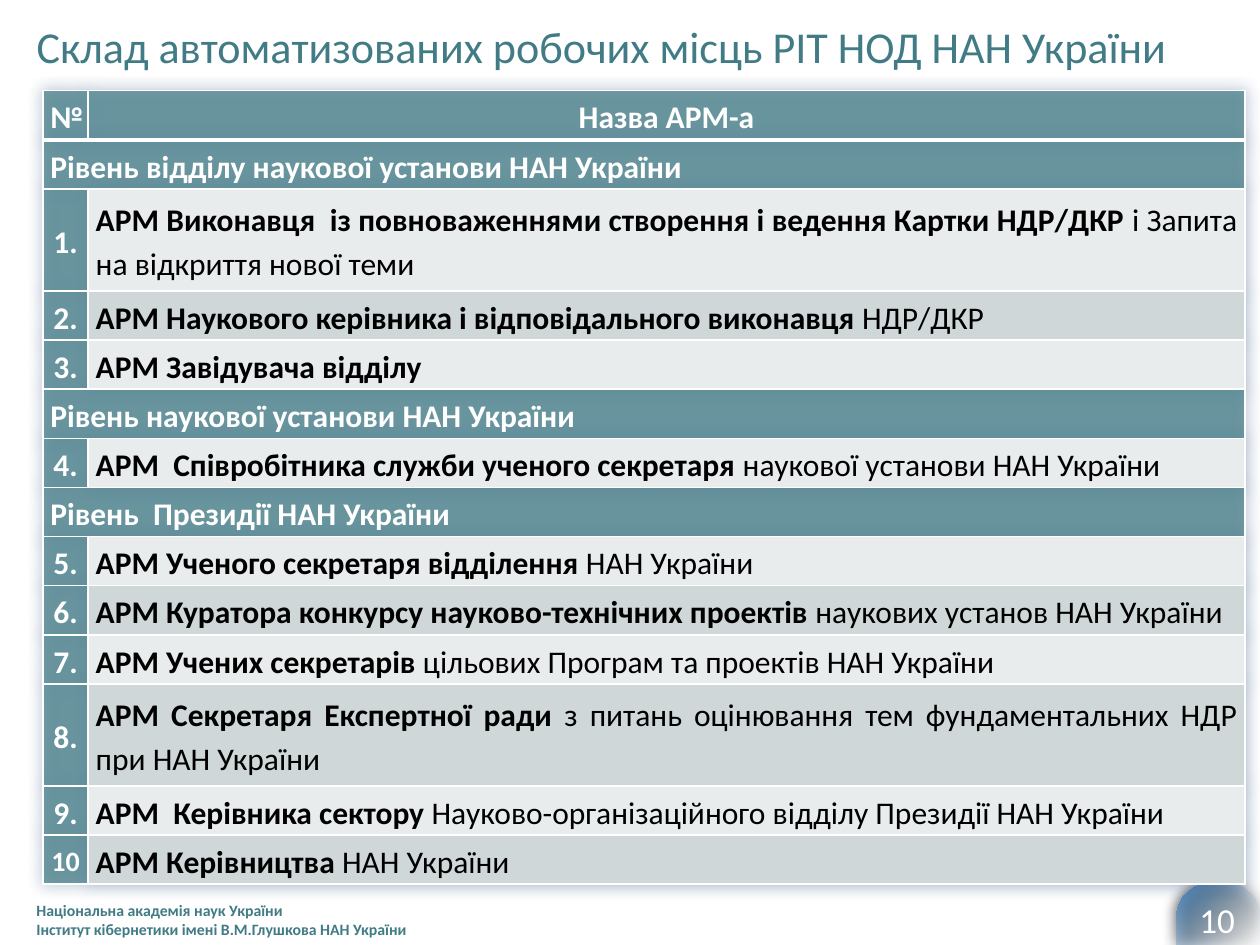
import pptx
import pptx.util
import pptx.oxml
import pptx.oxml.ns
import pptx.dml.color
import pptx.enum.shapes
import pptx.enum.text

ALIGN = pptx.enum.text.PP_ALIGN
MIDDLE = pptx.enum.text.MSO_ANCHOR.MIDDLE
NS = pptx.oxml.ns.nsdecls("a")
COLS, ROWS = 100, 75

HUES = {
    "teal": "417B85", "band": "417B84", "light": "E9ECED", "dark": "CFD7D9",
    "white": "FFFFFF", "page": "FEFFFF", "black": "000000",
    "pale": "E5E9EE", "blue": "3477B2", "glow": "1F497D",
}

# A lone string is a level heading; a pair is number and "bold|plain" name.
ITEMS = [
    "Рівень відділу наукової установи НАН України",
    ("1.", "АРМ Виконавця  із повноваженнями створення і ведення Картки НДР/ДКР |"
           "і Запита на відкриття нової теми"),
    ("2.", "АРМ Наукового керівника і відповідального виконавця |НДР/ДКР"),
    ("3.", "АРМ Завідувача відділу"),
    "Рівень наукової установи НАН України",
    ("4.", "АРМ  Співробітника служби ученого секретаря |наукової установи НАН України"),
    "Рівень  Президії НАН України",
    ("5.", "АРМ Ученого секретаря відділення |НАН України"),
    ("6.", "АРМ Куратора конкурсу науково-технічних проектів |наукових установ НАН України"),
    ("7.", "АРМ Учених секретарів |цільових Програм та проектів НАН України"),
    ("8.", "АРМ Секретаря Експертної ради |"
           "з питань оцінювання тем фундаментальних НДР при НАН України"),
    ("9.", "АРМ  Керівника сектору |Науково-організаційного відділу Президії НАН України"),
    ("10", "АРМ Керівництва |НАН України"),
]
TALL = ("1.", "8.")


def write(frame, text, size=18, hue="black", bold=False, align=ALIGN.LEFT, space=1):
    """Fill a frame; a bar in the text ends its bold part."""
    frame.word_wrap = True
    para = frame.paragraphs[0]
    para.alignment, para.line_spacing = align, space
    for part, words in enumerate(text.split("|")):
        for row, line in enumerate(words.split("\n")):
            if row:
                para.add_line_break()
            run = para.add_run()
            run.text = line
            font = run.font
            font.name, font.size = "Calibri", pptx.util.Pt(size)
            font.bold = bold and part == 0
            font.color.rgb = pptx.dml.color.RGBColor.from_string(HUES[hue])


def shade(hue, blur, dist, alpha):
    return pptx.oxml.parse_xml(
        f'<a:effectLst {NS}><a:outerShdw blurRad="{pptx.util.Pt(blur)}" '
        f'dist="{pptx.util.Pt(dist)}" dir="5400000" algn="ctr" rotWithShape="0">'
        f'<a:srgbClr val="{HUES[hue]}"><a:alpha val="{alpha * 1000}"/></a:srgbClr>'
        f'</a:outerShdw></a:effectLst>')


def blend(shape, stops, angle):
    """Give a shape a gradient of (place, hue, opacity) stops."""
    marks = "".join(
        f'<a:gs pos="{place * 1000}"><a:srgbClr val="{HUES[hue]}">'
        f'<a:alpha val="{alpha * 1000}"/></a:srgbClr></a:gs>'
        for place, hue, alpha in stops)
    grad = pptx.oxml.parse_xml(
        f'<a:gradFill {NS} rotWithShape="1"><a:gsLst>{marks}</a:gsLst>'
        f'<a:lin ang="{angle * 60000}" scaled="0"/></a:gradFill>')
    shape.fill.background()
    props = shape.element.spPr
    props.replace(props.find(pptx.oxml.ns.qn("a:noFill")), grad)


class Deck:
    def __init__(self):
        self.show = pptx.Presentation()
        self.show.slide_width = pptx.util.Inches(10)
        self.show.slide_height = pptx.util.Inches(7.5)
        self.slide = self.show.slides.add_slide(self.show.slide_layouts[5])
        self.shapes = self.slide.shapes

    def across(self, cols):
        return round(self.show.slide_width * cols / COLS)

    def down(self, rows):
        return round(self.show.slide_height * rows / ROWS)

    def box(self, x, y, w, h):
        return self.across(x), self.down(y), self.across(w), self.down(h)

    def badge(self, *place):
        kind = pptx.enum.shapes.MSO_SHAPE.FLOWCHART_DELAY
        shape = self.shapes.add_shape(kind, *self.box(*place))
        shape.rotation = 270
        shape.element.spPr.xfrm.set("flipV", "1")
        shape.line.fill.background()
        blend(shape, [(0, "pale", 0), (100, "blue", 100)], 45)
        shape.element.spPr.append(shade("black", 8.5, 1, 100))
        # The badge lies under everything else.
        tree = shape.element.getparent()
        tree.remove(shape.element)
        tree.insert(2, shape.element)

    def title(self, text, *place):
        shape = self.shapes.title
        shape.left, shape.top, shape.width, shape.height = self.box(*place)
        blend(shape, [(0, "white", 49), (15, "white", 100),
                      (54, "white", 70), (100, "white", 0)], 0)
        frame = shape.text_frame
        frame.auto_size = pptx.enum.text.MSO_AUTO_SIZE.NONE
        frame.vertical_anchor = MIDDLE
        write(frame, text, size=25.2, hue="teal")

    def label(self, text, *place, **fmt):
        frame = self.shapes.add_textbox(*self.box(*place)).text_frame
        frame.vertical_anchor = MIDDLE
        write(frame, text, **fmt)

    def cell(self, cell, text, fill, alpha=100, base=1, **fmt):
        cell.margin_left = cell.margin_right = pptx.util.Inches(0.06)
        cell.margin_top = cell.margin_bottom = 0
        cell.vertical_anchor = MIDDLE
        cell.fill.solid()
        cell.fill.fore_color.rgb = pptx.dml.color.RGBColor.from_string(HUES[fill])
        props = cell._tc.get_or_add_tcPr()
        if alpha < 100:
            tint = props.find(".//" + pptx.oxml.ns.qn("a:srgbClr"))
            tint.append(pptx.oxml.parse_xml(f'<a:alpha {NS} val="{alpha * 1000}"/>'))
        for spot, side in enumerate("LRTB"):
            width = pptx.util.Pt(base if side == "B" else 1)
            props.insert(spot, pptx.oxml.parse_xml(
                f'<a:ln{side} {NS} w="{width}"><a:solidFill>'
                f'<a:srgbClr val="{HUES["white"]}"/></a:solidFill></a:ln{side}>'))
        write(cell.text_frame, text, bold=True, space=1.15, **fmt)

    def table(self, items, x, y, widths, low, high):
        rows = [("№", "Назва АРМ-а")] + items
        tall = [high if row[0] in TALL else low for row in rows]
        frame = self.shapes.add_table(
            len(rows), 2, *self.box(x, y, sum(widths), sum(tall)))
        grid = frame.table
        grid._tbl.tblPr.insert(0, shade("glow", 9, 0, 40))
        for col, width in zip(grid.columns, widths):
            col.width = self.across(width)
        head = {"fill": "band", "alpha": 69, "hue": "white"}
        fills = ["light", "dark"]
        for at, row in enumerate(rows):
            grid.rows[at].height = self.down(tall[at])
            left, right = grid.cell(at, 0), grid.cell(at, 1)
            if isinstance(row, str):
                left.merge(right)
                self.cell(left, row, align=ALIGN.JUSTIFY, **head)
                continue
            base = 1 if at else 3
            self.cell(left, row[0], base=base, align=ALIGN.CENTER,
                      size=16 if row[0] == "10" else 18, **head)
            if at:
                self.cell(right, row[1], fills[at % 2], align=ALIGN.JUSTIFY)
            else:
                self.cell(right, row[1], base=base, align=ALIGN.CENTER, **head)


def main():
    deck = Deck()
    deck.badge(94.1, 69.1, 5.1, 6.6)
    deck.title("Склад автоматизованих робочих місць РІТ НОД НАН України",
               1.9, 0, 98.1, 7.2)
    deck.label("Національна академія наук України \n"
               "Інститут кібернетики імені В.М.Глушкова НАН України",
               1.9, 71, 44.2, 4, size=9, hue="teal", bold=True)
    deck.label("10", 93.4, 71, 6.4, 4, size=20, hue="page", align=ALIGN.CENTER)
    deck.table(ITEMS, 3.4, 7.2, (3.6, 91.8), 3.9, 8.1)
    deck.show.save("out.pptx")


if __name__ == "__main__":
    main()
